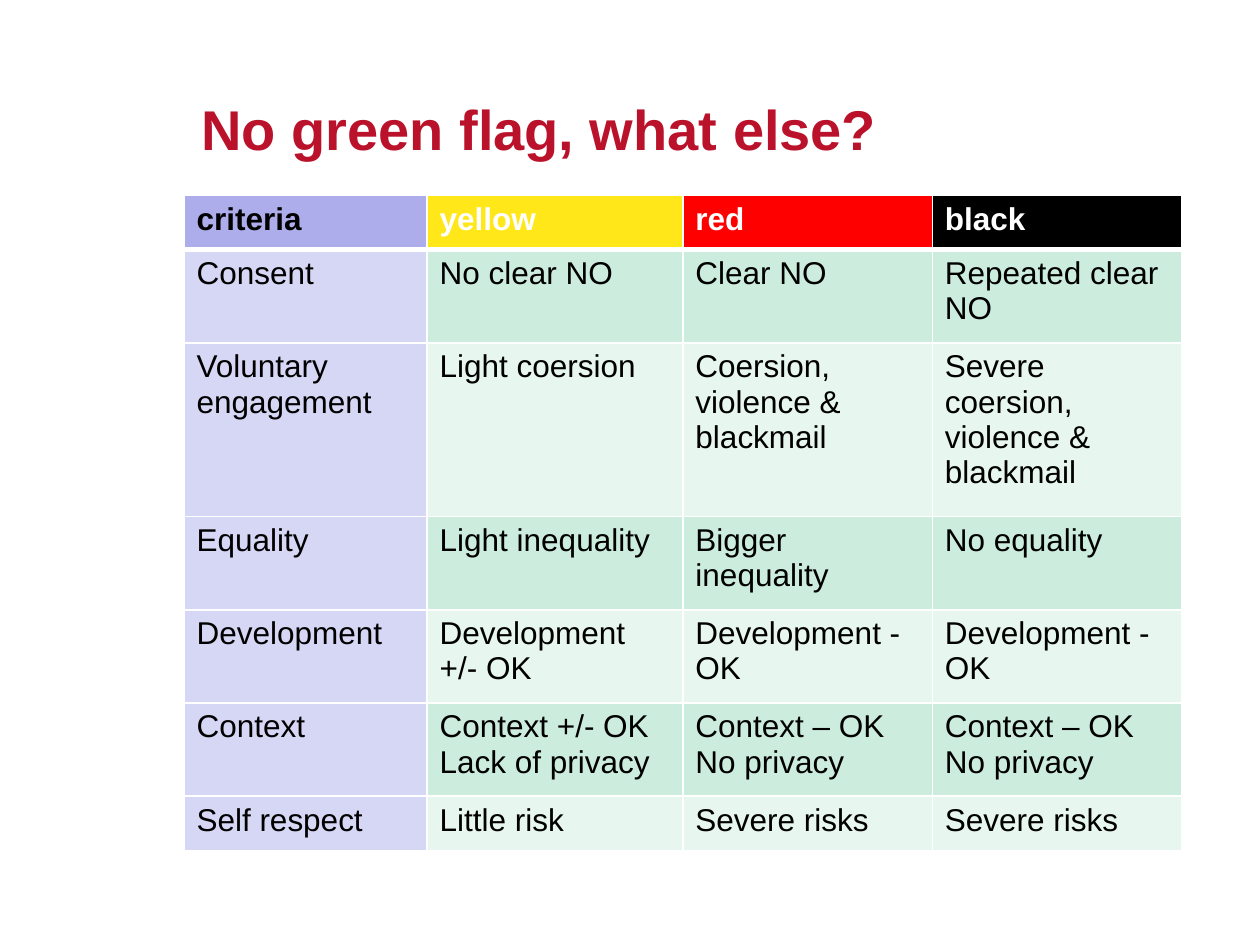
from lxml import etree
from pptx import Presentation
from pptx.dml.color import RGBColor
from pptx.enum.text import MSO_ANCHOR
from pptx.oxml.ns import qn
from pptx.util import Inches, Pt

MIDDLE = MSO_ANCHOR.MIDDLE
WHITE = RGBColor(0xFF, 0xFF, 0xFF)
BLACK = RGBColor(0x00, 0x00, 0x00)
CRIMSON = RGBColor(0xBA, 0x12, 0x2B)
LILAC = RGBColor(0xAD, 0xAD, 0xEB)
PALE = RGBColor(0xD6, 0xD6, 0xF5)
YELLOW = RGBColor(0xFF, 0xE7, 0x1A)
RED = RGBColor(0xFF, 0x00, 0x00)
MINT = RGBColor(0xCC, 0xEC, 0xDE)
LIGHT = RGBColor(0xE7, 0xF6, 0xEF)

WIDTH, HEIGHT = Inches(10), Inches(7.5)
COLS = [1.93, 2.03, 1.98, 1.98]
ROWS = [0.43, 0.74, 1.38, 0.74, 0.74, 0.74, 0.43]
HEADS = [
    ("criteria", LILAC, BLACK),
    ("yellow", YELLOW, WHITE),
    ("red", RED, WHITE),
    ("black", BLACK, WHITE),
]
BODY = [
    ["Consent", "No clear NO", "Clear NO", "Repeated clear NO"],
    ["Voluntary engagement", "Light coersion", "Coersion, violence & blackmail",
     "Severe coersion, violence & blackmail"],
    ["Equality", "Light inequality", "Bigger inequality", "No equality"],
    ["Development", "Development +/- OK", "Development - OK", "Development - OK"],
    ["Context", "Context +/- OK\nLack of privacy", "Context – OK\nNo privacy",
     "Context – OK\nNo privacy"],
    ["Self respect", "Little risk", "Severe risks", "Severe risks"],
]


def share(left, top, width, height):
    return [round(part * size) for part, size in
            zip((left, top, width, height), (WIDTH, HEIGHT) * 2)]


def style(frame, size, color, bold):
    form = {"name": "Arial", "size": Pt(size), "bold": bold}
    for para in frame.paragraphs:
        for run in para.runs:
            for key, value in form.items():
                setattr(run.font, key, value)
            run.font.color.rgb = color


def border(cell, widths):
    props = cell._tc.get_or_add_tcPr()
    for side, width in widths.items():
        line = etree.SubElement(props, qn(f"a:ln{side}"), w=str(Pt(width)))
        fill = etree.SubElement(line, qn("a:solidFill"))
        etree.SubElement(fill, qn("a:srgbClr"), val=str(WHITE))


def fill_cell(cell, text, back, color, bold, widths):
    cell.text = text
    style(cell.text_frame, 18, color, bold)
    border(cell, widths)
    cell.fill.solid()
    cell.fill.fore_color.rgb = back


def add_title(slide, box):
    frame = slide.shapes.add_textbox(*box).text_frame
    frame.word_wrap = True
    frame.vertical_anchor = MIDDLE
    frame.text = "No green flag, what else?"
    style(frame, 32, CRIMSON, True)


def add_grid(slide, box):
    table = slide.shapes.add_table(len(ROWS), len(COLS), *box).table
    for col, size in zip(table.columns, COLS):
        col.width = round(box[2] * size / sum(COLS))
    for row, size in zip(table.rows, ROWS):
        row.height = round(box[3] * size / sum(ROWS))
    for c, (text, back, color) in enumerate(HEADS):
        fill_cell(table.cell(0, c), text, back, color, True,
                  {"L": 1, "R": 1, "T": 1, "B": 3})
    for r, texts in enumerate(BODY, 1):
        band = MINT if r % 2 else LIGHT
        widths = {"L": 1, "R": 1, "T": 3 if r == 1 else 1, "B": 1}
        for c, text in enumerate(texts):
            fill_cell(table.cell(r, c), text, band if c else PALE, BLACK,
                      False, widths)


def main():
    deck = Presentation()
    deck.slide_width, deck.slide_height = WIDTH, HEIGHT
    slide = deck.slides.add_slide(deck.slide_layouts[6])
    add_title(slide, share(0.15, 0.05, 0.81, 0.17))
    add_grid(slide, share(0.146, 0.207, 0.792, 0.693))
    deck.save("out.pptx")


if __name__ == "__main__":
    main()
